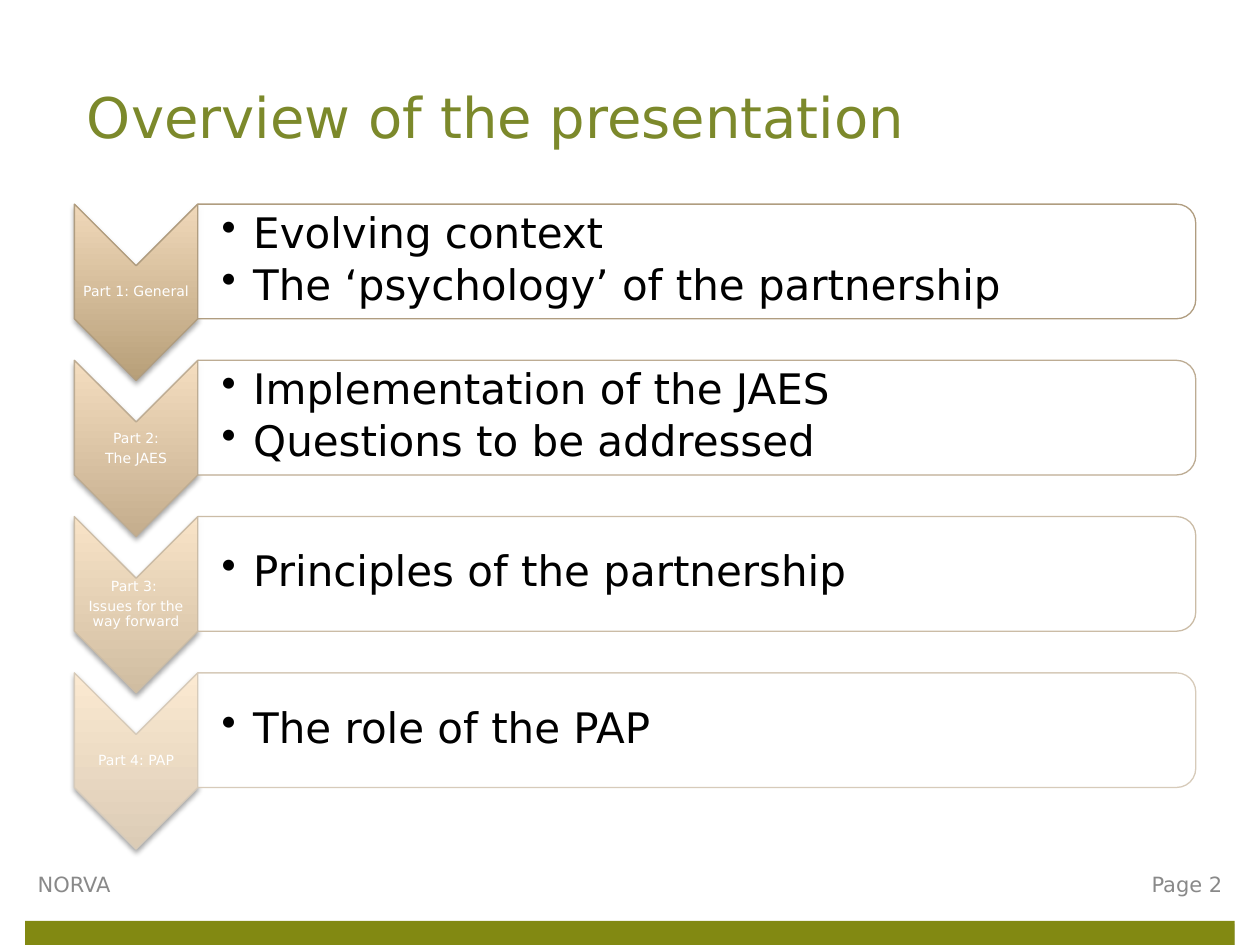
from lxml import etree
from pptx import Presentation
from pptx.dml.color import RGBColor
from pptx.enum import shapes, text
from pptx.oxml import parse_xml
from pptx.oxml.ns import nsdecls, qn
from pptx.util import Inches, Pt

FONT = "DejaVu Sans"
GREY = "898989"
PITCH = 1.24
# chevron label, bullets, dark fill, light fill, outline
PARTS = [
    (["Part 1: General"], ["Evolving context", "The ‘psychology’ of the partnership"],
     "B79F79", "F0D8B9", "B09D80"),
    (["Part 2:", "The JAES"], ["Implementation of the JAES", "Questions to be addressed"],
     "C4AD8D", "F4DDBF", "BDAC93"),
    (["Part 3: ", "Issues for the way forward"], ["Principles of the partnership"],
     "D0BDA1", "F8E3C7", "CBBCA6"),
    (["Part 4: PAP"], ["The role of the PAP"],
     "DCCCB6", "FBE9D1", "D7CBBA"),
]


def rgb(value):
    return RGBColor.from_string(value)


def write(frame, lines, size, color, align=text.PP_ALIGN.LEFT, after=0, spacing=1.0):
    """Fill a text frame with one paragraph per line, centred vertically."""
    frame.word_wrap = True
    frame.auto_size = text.MSO_AUTO_SIZE.NONE
    frame.vertical_anchor = text.MSO_ANCHOR.MIDDLE
    frame.text = "\n".join(lines)
    for para in frame.paragraphs:
        para.alignment = align
        para.line_spacing = spacing
        para.space_after = Pt(after)
        for span in para.runs:
            span.font.name = FONT
            span.font.size = Pt(size)
            span.font.color.rgb = rgb(color)


def add_text(page, left, top, width, height, lines, size, color, insets=None, **style):
    box = page.shapes.add_textbox(Inches(left), Inches(top), Inches(width), Inches(height))
    frame = box.text_frame
    write(frame, lines, size, color, **style)
    if insets:
        frame.margin_left = Inches(insets[0])
        frame.margin_top = frame.margin_right = frame.margin_bottom = Inches(insets[1])
    return box


def add_turned(page, kind, left, top, width, height, line):
    """Add a shape turned by 90 degrees that covers the given box."""
    shift = (width - height) / 2
    shape = page.shapes.add_shape(kind, Inches(left + shift), Inches(top - shift),
                                  Inches(height), Inches(width))
    shape.rotation = 90
    shape.shadow.inherit = False
    shape.line.color.rgb = rgb(line)
    shape.line.width = Pt(0.75)
    return shape


def add_shadow(shape, color, blur):
    shape.shadow.inherit = False
    effects = shape._element.spPr.find(qn("a:effectLst"))
    effects.append(parse_xml(
        f'<a:outerShdw {nsdecls("a")} blurRad="{Pt(blur)}" dist="{Pt(1.8)}" dir="5400000" '
        f'rotWithShape="0"><a:srgbClr val="{color}"><a:alpha val="35000"/></a:srgbClr>'
        '</a:outerShdw>'))


def add_bullets(frame):
    for para in frame.paragraphs:
        props = para._p.get_or_add_pPr()
        props.set("marL", str(Inches(0.25)))
        props.set("indent", str(-Inches(0.25)))
        etree.SubElement(props, qn("a:buChar")).set("char", "•")


def add_chevron(page, left, top, width, height, labels, dark, light, line):
    chevron = add_turned(page, shapes.MSO_SHAPE.CHEVRON, left, top, width, height, line)
    chevron.fill.gradient()
    chevron.fill.gradient_angle = 90
    for stop, color, position in zip(chevron.fill.gradient_stops, (dark, light), (0, 1)):
        stop.color.rgb = rgb(color)
        stop.position = position
    # the gradient stays vertical although the chevron is turned
    chevron._element.spPr.find(qn("a:gradFill")).set("rotWithShape", "0")
    add_shadow(chevron, "000000", 3.1)
    notch = width / 2
    add_text(page, left, top + notch, width, height - 2 * notch, labels, 8, "FFFFFF",
             insets=(0.01, 0.01), align=text.PP_ALIGN.CENTER, after=2.8, spacing=0.9)


def add_panel(page, left, top, width, height, bullets, line):
    panel = add_turned(page, shapes.MSO_SHAPE.ROUND_2_SAME_RECTANGLE,
                       left, top, width, height, line)
    panel.fill.solid()
    panel.fill.fore_color.rgb = rgb("FFFFFF")
    white = panel._element.spPr.find(qn("a:solidFill"))[0]
    etree.SubElement(white, qn("a:alpha")).set("val", "90000")
    box = add_text(page, left, top + 0.04, width - 0.05, height - 0.09, bullets, 24, "000000",
                   insets=(0.19, 0.02), after=3.6, spacing=0.9)
    add_bullets(box.text_frame)


def add_overview(page, left, top, width):
    for row, (labels, bullets, dark, light, line) in enumerate(PARTS):
        y = top + row * PITCH
        add_chevron(page, left, y, 0.98, 1.4, labels, dark, light, line)
        add_panel(page, left + 0.98, y, width - 0.98, 0.91, bullets, line)


def add_title(page, left, top, width, height):
    title = page.shapes.title
    title.left, title.top = Inches(left), Inches(top)
    title.width, title.height = Inches(width), Inches(height)
    write(title.text_frame, ["Overview of the presentation"], 32, "7C892B")


def add_footer(page, left, top, width):
    band = page.shapes.add_shape(shapes.MSO_SHAPE.RECTANGLE, Inches(left), Inches(top + 0.49),
                                 Inches(width), Inches(0.2))
    band.fill.solid()
    band.fill.fore_color.rgb = rgb("828912")
    band.line.fill.background()
    add_shadow(band, "808080", 0)
    add_text(page, left, top, 2.05, 0.4, ["NORVA"], 12, GREY)
    add_text(page, left + width - 1.18, top, 1.18, 0.4, ["Page 2"], 12, GREY,
             align=text.PP_ALIGN.RIGHT)


def main():
    deck = Presentation()
    deck.slide_width, deck.slide_height = Inches(10), Inches(7.5)
    page = deck.slides.add_slide(deck.slide_layouts[5])
    add_title(page, 0.59, 0.3, 8.91, 1.25)
    add_overview(page, 0.59, 1.62, 8.9)
    add_footer(page, 0.2, 6.82, 9.6)
    deck.save("out.pptx")


if __name__ == "__main__":
    main()
